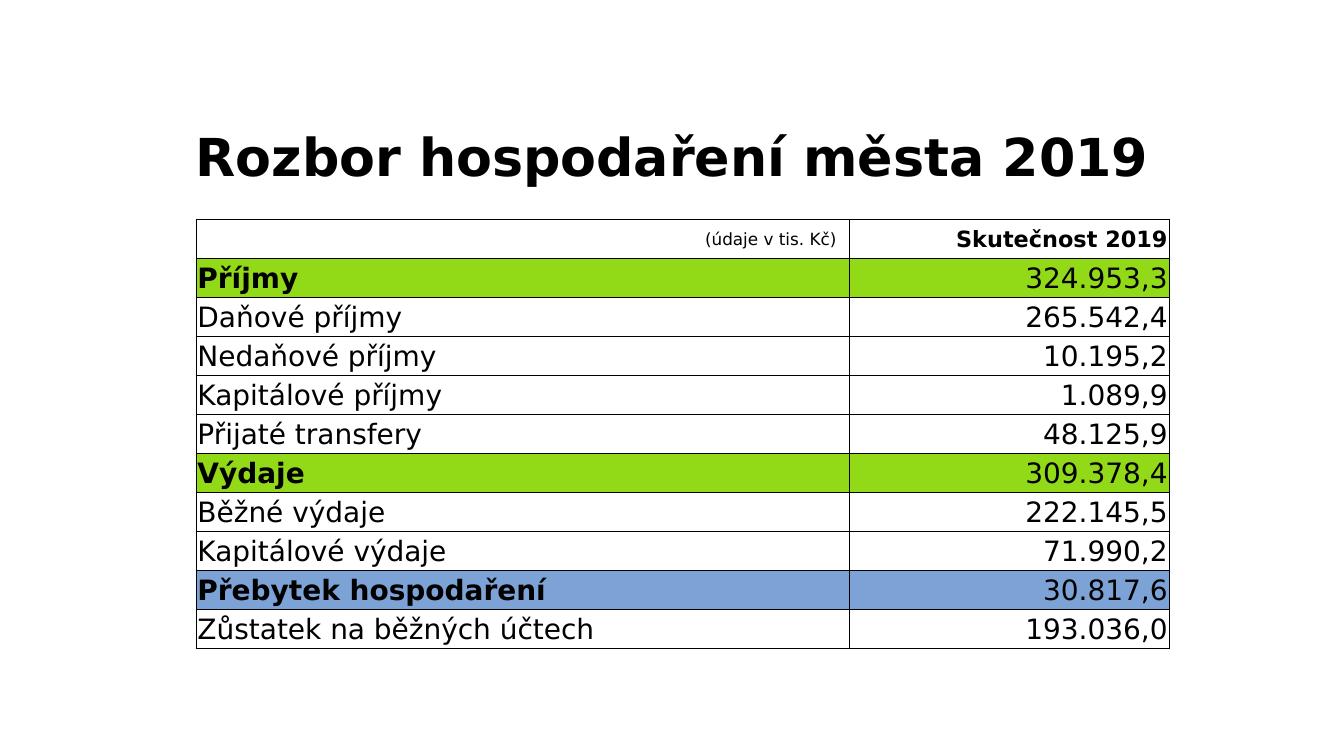
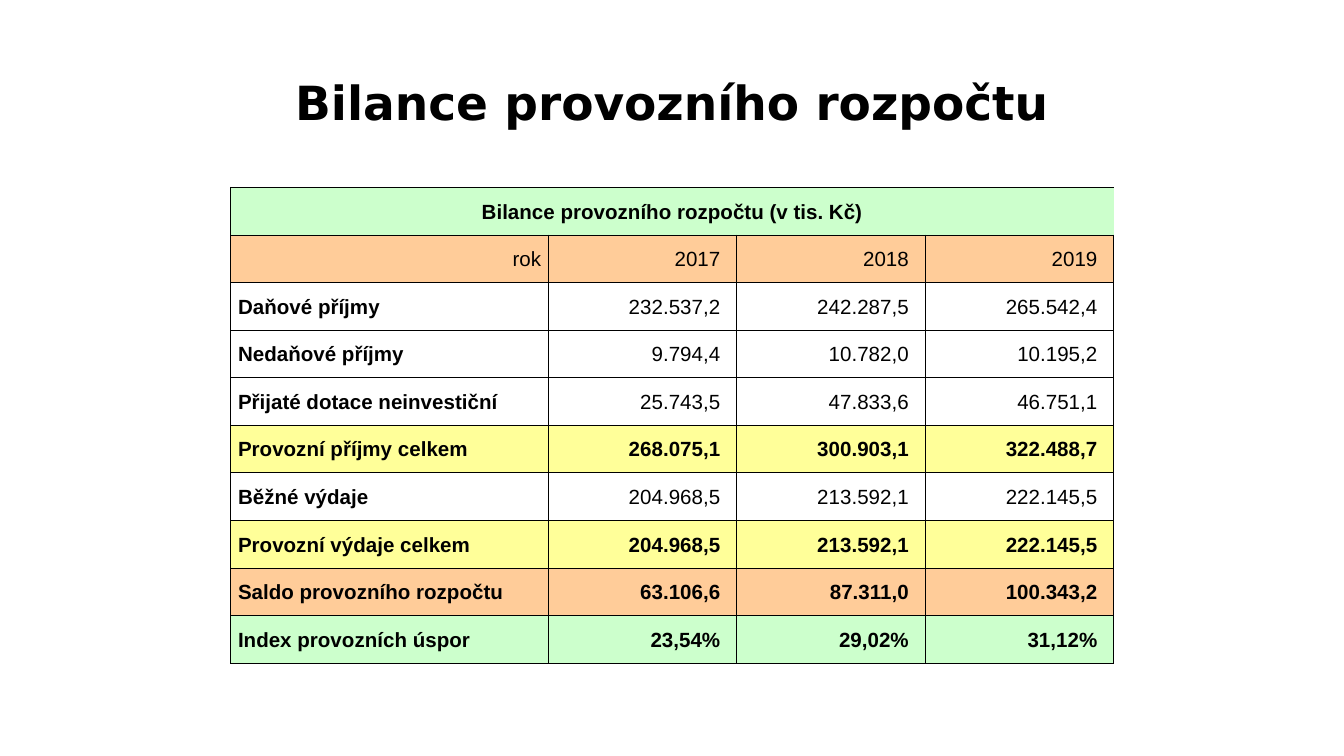
from lxml import etree
from pptx import Presentation
from pptx.dml import color as c
from pptx.enum import text as t
from pptx.oxml import ns
from pptx.util import Pt

BLACK, WHITE = "000000", "FFFFFF"
LIME, BLUE = "92D918", "7DA2D5"
MINT, PEACH, LEMON = "CCFFCC", "FFCC99", "FFFF99"
SANS = "DejaVu Sans"
LEFT, MID, RIGHT = t.PP_ALIGN.LEFT, t.PP_ALIGN.CENTER, t.PP_ALIGN.RIGHT
hue = c.RGBColor.from_string


def put(frame, words, size, face, bold, align):
    """Write one styled run into the first paragraph."""
    para = frame.paragraphs[0]
    para.alignment = align
    run = para.add_run()
    run.text = words
    font = run.font
    font.size, font.name, font.bold = Pt(size), face, bold
    font.color.rgb = hue(BLACK)


def edge(cell, side, shown):
    """Draw or hide one border of a table cell."""
    line = etree.SubElement(cell._tc.get_or_add_tcPr(), ns.qn("a:ln" + side), w=str(Pt(0.5)))
    if shown:
        fill = etree.SubElement(line, ns.qn("a:solidFill"))
        etree.SubElement(fill, ns.qn("a:srgbClr"), val=BLACK)
    else:
        etree.SubElement(line, ns.qn("a:noFill"))


# Each row: fill, bold label, bold values, then the cell texts
city = [
    (None, False, True, "(údaje v tis. Kč)", "Skutečnost 2019"),
    (LIME, True, False, "Příjmy", "324.953,3"),
    (None, False, False, "Daňové příjmy", "265.542,4"),
    (None, False, False, "Nedaňové příjmy", "10.195,2"),
    (None, False, False, "Kapitálové příjmy", "1.089,9"),
    (None, False, False, "Přijaté transfery", "48.125,9"),
    (LIME, True, False, "Výdaje", "309.378,4"),
    (None, False, False, "Běžné výdaje", "222.145,5"),
    (None, False, False, "Kapitálové výdaje", "71.990,2"),
    (BLUE, True, False, "Přebytek hospodaření", "30.817,6"),
    (None, False, False, "Zůstatek na běžných účtech", "193.036,0"),
]
budget = [
    (MINT, True, True, "Bilance provozního rozpočtu (v tis. Kč)"),
    (PEACH, False, False, "rok", "2017", "2018", "2019"),
    (WHITE, True, False, "Daňové příjmy", "232.537,2", "242.287,5", "265.542,4"),
    (WHITE, True, False, "Nedaňové příjmy", "9.794,4", "10.782,0", "10.195,2"),
    (WHITE, True, False, "Přijaté dotace neinvestiční", "25.743,5", "47.833,6", "46.751,1"),
    (LEMON, True, True, "Provozní příjmy celkem", "268.075,1", "300.903,1", "322.488,7"),
    (None, True, False, "Běžné výdaje", "204.968,5", "213.592,1", "222.145,5"),
    (LEMON, True, True, "Provozní výdaje celkem", "204.968,5", "213.592,1", "222.145,5"),
    (PEACH, True, True, "Saldo provozního rozpočtu", "63.106,6", "87.311,0", "100.343,2"),
    (MINT, True, True, "Index provozních úspor", "23,54%", "29,02%", "31,12%"),
]

# Title: text, size, top, height. Table: left, top, widths, row height, face, sizes.
# Pads: left of labels, right of header label, right of values.
pages = [
    (("Rozbor hospodaření města 2019", 28, 49.7, 67.7),
     (105, 117.5, [350, 171.4], 20.9, SANS, {"note": 9, "head": 12, "body": 15}),
     (0.8, 7, 0.8), city),
    (("Bilance provozního rozpočtu", 25.2, 35.3, 38.2),
     (123.7, 100.4, [170, 101, 101, 101], 25.5, "Arial", {"note": 11, "head": 11, "body": 11}),
     (3.8, 3.8, 8.8), budget),
]

deck = Presentation()
deck.slide_width, deck.slide_height = Pt(720), Pt(405)

for title, place, pads, rows in pages:
    slide = deck.slides.add_slide(deck.slide_layouts[6])
    words, size, top, high = title
    box = slide.shapes.add_textbox(Pt(36), Pt(top), Pt(648), Pt(high)).text_frame
    box.word_wrap = True
    box.vertical_anchor = t.MSO_ANCHOR.MIDDLE
    put(box, words, size, SANS, True, MID)

    left, top, wides, step, face, sizes = place
    table = slide.shapes.add_table(
        len(rows), len(wides), Pt(left), Pt(top), Pt(sum(wides)), Pt(step * len(rows))).table
    table.first_row = table.horz_banding = False
    for col, wide in zip(table.columns, wides):
        col.width = Pt(wide)

    label_pad, head_pad, value_pad = pads
    for i, (fill, strong, heavy, *texts) in enumerate(rows):
        table.rows[i].height = Pt(step)
        banner = len(texts) == 1
        head = texts[0] in ("(údaje v tis. Kč)", "rok")
        for j in range(len(wides)):
            cell = table.cell(i, j)
            for side in "LRTB":
                edge(cell, side, not banner or side in "TB" or (side == "L" and j == 0))
            if fill:
                cell.fill.solid()
                cell.fill.fore_color.rgb = hue(fill)
            else:
                cell.fill.background()
            cell.vertical_anchor = t.MSO_ANCHOR.MIDDLE
            cell.margin_top, cell.margin_bottom = Pt(0.8), Pt(0)
            cell.margin_left = cell.margin_right = Pt(0.8)
            if j >= len(texts):
                continue
            if banner:
                align = MID
            elif j:
                align = RIGHT
                cell.margin_right = Pt(value_pad)
            elif head:
                align = RIGHT
                cell.margin_right = Pt(head_pad)
            else:
                align = LEFT
                cell.margin_left = Pt(label_pad)
            kind = "body" if not head else "head" if j else "note"
            put(cell.text_frame, texts[j], sizes[kind], face, heavy if j else strong, align)
        if banner:
            table.cell(i, 0).merge(table.cell(i, len(wides) - 1))

deck.save("out.pptx")
